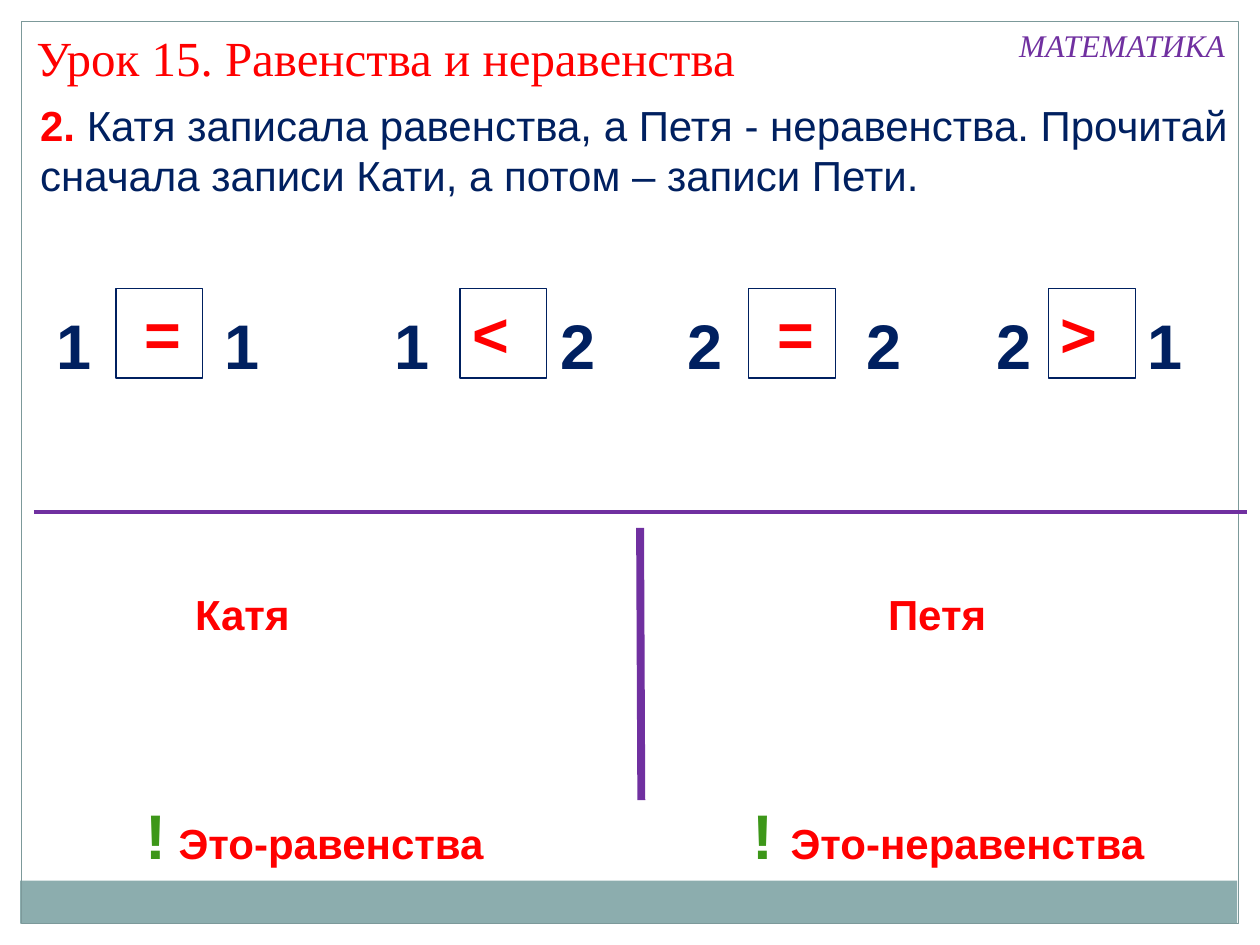
from lxml import etree
from pptx import Presentation
from pptx.dml.color import RGBColor
from pptx.enum import shapes, text
from pptx.oxml.ns import qn
from pptx.util import Inches, Pt

COLORS = {
    "red": "FF0000",
    "navy": "002060",
    "purple": "7030A0",
    "green": "3D9719",
    "band": "8CADAE",
    "frame": "7C999A",
}


def rgb(name):
    return RGBColor.from_string(COLORS[name])


def add_text(parent, runs, x, y, w, h, size=24, color="red", font="Arial",
             bold=True, italic=False, wrap=True, inset=0.1):
    sp = parent.shapes.add_textbox(Inches(x), Inches(y), Inches(w), Inches(h))
    tf = sp.text_frame
    tf.word_wrap = wrap
    tf.auto_size = text.MSO_AUTO_SIZE.SHAPE_TO_FIT_TEXT
    tf.margin_left = Inches(inset)
    p = tf.paragraphs[0]
    if isinstance(runs, str):
        runs = [(runs, {})]
    for words, own in runs:
        r = p.add_run()
        r.text = words
        r.font.name = font
        r.font.size = Pt(own.get("size", size))
        r.font.bold = own.get("bold", bold)
        r.font.italic = italic
        r.font.color.rgb = rgb(own.get("color", color))
    return sp


def add_rect(parent, x, y, w, h, fill=None, line=None):
    sp = parent.shapes.add_shape(shapes.MSO_SHAPE.RECTANGLE,
                                 Inches(x), Inches(y), Inches(w), Inches(h))
    sp.shadow.inherit = False
    if fill:
        sp.fill.solid()
        sp.fill.fore_color.rgb = rgb(fill)
    else:
        sp.fill.background()
    if line:
        sp.line.color.rgb = rgb(line)
        sp.line.width = Pt(0.75)
    else:
        sp.line.fill.background()
    return sp


def add_line(s, x1, y1, x2, y2, width):
    line = s.shapes.add_connector(shapes.MSO_CONNECTOR.STRAIGHT,
                                  Inches(x1), Inches(y1), Inches(x2), Inches(y2))
    line.line.color.rgb = rgb("purple")
    line.line.width = Pt(width)
    etree.SubElement(line._element.spPr, qn("a:effectLst"))
    return line


def add_comparison(s, left, sign, right, left_x, box_x, right_x):
    group = s.shapes.add_group_shape()
    for digit, x in ((left, left_x), (right, right_x)):
        add_text(group, digit, x, 2.38, 0.48, 0.71, size=36, color="navy", wrap=False)
    add_rect(group, box_x, 2.29, 0.69, 0.71, line="navy")
    add_text(group, sign, box_x, 2.29, 0.69, 0.71, size=36,
             inset=0.23 if sign == "=" else 0.1)


def main():
    prs = Presentation()
    prs.slide_width, prs.slide_height = Inches(10), Inches(7.5)
    s = prs.slides.add_slide(prs.slide_layouts[6])

    add_rect(s, 0.16, 6.99, 9.66, 0.34, fill="band")
    add_rect(s, 0.17, 0.17, 9.66, 7.16, line="frame")

    add_text(s, "МАТЕМАТИКА", 7.99, 0.16, 1.85, 0.4, size=18, color="purple",
             font="Times New Roman", bold=False, italic=True, wrap=False)
    add_text(s, "Урок 15. Равенства и неравенства", 0.19, 0.17, 7.8, 0.57,
             size=28, font="Times New Roman", bold=False)
    add_text(s, [("2. ", {}),
                 ("Катя записала равенства, а Петя - неравенства. Прочитай "
                  "сначала записи Кати, а потом – записи Пети.",
                  {"color": "navy", "bold": False})],
             0.22, 0.74, 9.63, 0.91)

    for comparison in (
        ("1", "=", "1", 0.35, 0.92, 1.68),
        ("1", "<", "2", 3.03, 3.65, 4.35),
        ("2", "=", "2", 5.36, 5.94, 6.78),
        ("2", ">", "1", 7.81, 8.32, 9.01),
    ):
        add_comparison(s, *comparison)

    add_line(s, 0.27, 4.06, 9.9, 4.06, 2.25)
    add_line(s, 5.08, 4.19, 5.09, 6.35, 4.5)

    for name, x in (("Катя", 1.45), ("Петя", 6.95)):
        add_text(s, name, x, 4.62, 1.6, 0.5)

    mark = {"size": 36, "color": "green"}
    add_text(s, [("!", mark), (" Это-равенства", {})], 1.06, 6.27, 3.04, 0.71)
    add_text(s, [("! ", mark), ("Это-неравенства", {})], 5.87, 6.27, 3.81, 0.71)

    prs.save("out.pptx")


if __name__ == "__main__":
    main()
